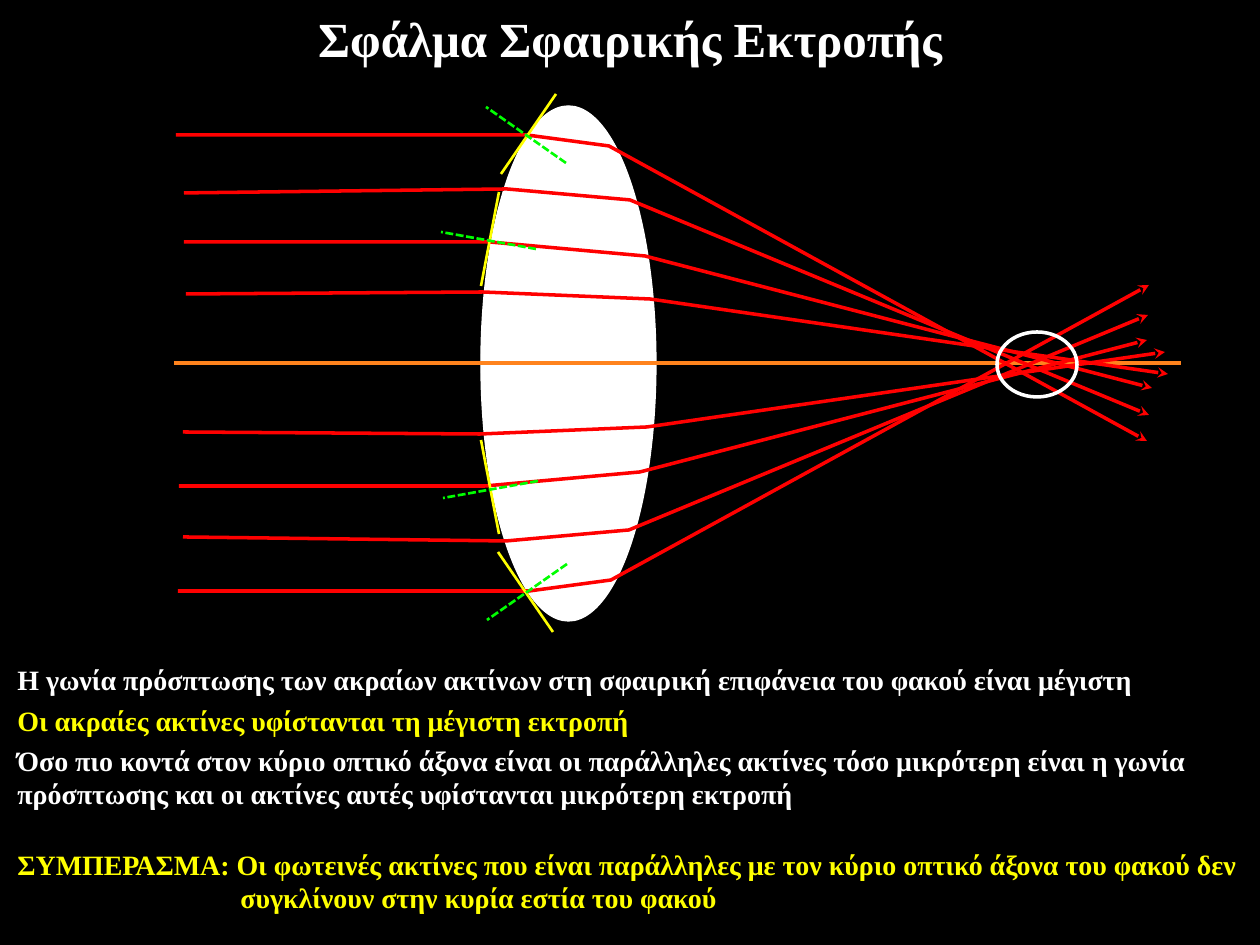
"""Build a slide on the spherical aberration of a lens."""
import pptx
import pptx.dml.color
import pptx.enum.dml
import pptx.enum.shapes
import pptx.enum.text
import pptx.oxml.ns
import pptx.util
from lxml import etree

RGB = pptx.dml.color.RGBColor
BLACK = RGB(0, 0, 0)
WHITE = RGB(255, 255, 255)
RED = RGB(255, 0, 0)
ORANGE = RGB(255, 131, 29)
YELLOW = RGB(255, 255, 0)
GREEN = RGB(0, 255, 0)
FONT = "Times New Roman"
SCALE = 914400 / 126
OVAL = pptx.enum.shapes.MSO_SHAPE.OVAL
DASH = pptx.enum.dml.MSO_LINE.SQUARE_DOT

# Each entry: points above the axis, then x shift and y sum of the mirrored twin.
RAYS = [
    ([(176, 135), (527, 135), (609, 146), (1147, 441)], 2, 726),
    ([(184, 193), (507, 189), (630, 200), (1149, 415)], -1, 730),
    ([(186, 294), (483, 292), (650, 299), (1168, 374)], -3, 726),
    ([(184, 242), (490, 242), (645, 256), (1152, 388)], -5, 728),
]
TANGENTS = [
    ([(556, 94), (501, 174)], -3, 726),
    ([(499, 192), (481, 286)], 0, 726),
]
NORMALS = [
    ([(566, 163), (486, 107)], 1, 727),
    ([(536, 249), (441, 232)], 2, 730),
]
NOTES = [
    (656, 43, WHITE, "Η γωνία πρόσπτωσης των ακραίων ακτίνων στη σφαιρική "
     "επιφάνεια του φακού είναι μέγιστη"),
    (697, 43, YELLOW, "Οι ακραίες ακτίνες υφίστανται τη μέγιστη εκτροπή"),
    (737, 77, WHITE, "Όσο πιο κοντά στον κύριο οπτικό άξονα είναι οι παράλληλες "
     "ακτίνες τόσο μικρότερη είναι η γωνία πρόσπτωσης και οι ακτίνες αυτές "
     "υφίστανται μικρότερη εκτροπή"),
    (841, 78, YELLOW, "ΣΥΜΠΕΡΑΣΜΑ: Οι φωτεινές ακτίνες που είναι παράλληλες με "
     "τον κύριο οπτικό άξονα του φακού δεν\nσυγκλίνουν στην κυρία εστία του φακού"),
]


def px(n):
    return pptx.util.Emu(round(n * SCALE))


def with_mirror(points, dx, y_sum):
    return points, [(x + dx, y_sum - y) for x, y in points]


def set_line(sp, color, width):
    sp.line.color.rgb = color
    sp.line.width = pptx.util.Pt(width)


def add_oval(slide, box, color, width, fill=None):
    sp = slide.shapes.add_shape(OVAL, *map(px, box))
    sp.shadow.inherit = False
    if fill is None:
        sp.fill.background()
    else:
        sp.fill.solid()
        sp.fill.fore_color.rgb = fill
    set_line(sp, color, width)


def add_line(slide, points, color, width, dash=None):
    ends = [px(n) for point in points for n in point]
    sp = slide.shapes.add_connector(pptx.enum.shapes.MSO_CONNECTOR.STRAIGHT, *ends)
    set_line(sp, color, width)
    if dash:
        sp.line.dash_style = dash
    etree.SubElement(sp._element.spPr, pptx.oxml.ns.qn("a:effectLst"))


def add_ray(slide, points):
    builder = slide.shapes.build_freeform(*points[0], scale=SCALE)
    builder.add_line_segments(points[1:], close=False)
    sp = builder.convert_to_shape()
    sp.shadow.inherit = False
    sp.fill.background()
    set_line(sp, RED, 2)
    ln = sp.line._get_or_add_ln()
    etree.SubElement(ln, pptx.oxml.ns.qn("a:tailEnd"), type="stealth")


def write_text(sp, text, size, color, align):
    tf = sp.text_frame
    tf.text = text
    tf.word_wrap = True
    tf.auto_size = pptx.enum.text.MSO_AUTO_SIZE.NONE
    tf.vertical_anchor = pptx.enum.text.MSO_ANCHOR.TOP
    for p in tf.paragraphs:
        p.alignment = align
        for r in p.runs:
            r.font.name = FONT
            r.font.size = pptx.util.Pt(size)
            r.font.bold = True
            r.font.color.rgb = color
    return tf


def add_title(slide, text):
    sp = slide.shapes.title
    sp.left, sp.top, sp.width, sp.height = map(px, (0, 2, 1260, 67))
    write_text(sp, text, 28, WHITE, pptx.enum.text.PP_ALIGN.CENTER)


def add_note(slide, top, height, color, text):
    sp = slide.shapes.add_textbox(px(5), px(top), px(1255), px(height))
    tf = write_text(sp, text, 16, color, pptx.enum.text.PP_ALIGN.LEFT)
    for p in tf.paragraphs[1:]:
        p._p.get_or_add_pPr().set("marL", str(px(223)))


def main():
    prs = pptx.Presentation()
    prs.slide_width, prs.slide_height = px(1260), px(945)
    slide = prs.slides.add_slide(prs.slide_layouts[5])
    slide.background.fill.solid()
    slide.background.fill.fore_color.rgb = BLACK

    add_title(slide, "Σφάλμα Σφαιρικής Εκτροπής")
    add_oval(slide, (481, 106, 175, 515), WHITE, 0.75, WHITE)
    add_line(slide, [(174, 363), (1181, 363)], ORANGE, 2.25)
    for ray in RAYS:
        for points in with_mirror(*ray):
            add_ray(slide, points)
    for lines, color, dash in ((TANGENTS, YELLOW, None), (NORMALS, GREEN, DASH)):
        for line in lines:
            for points in with_mirror(*line):
                add_line(slide, points, color, 1.5, dash)
    for note in NOTES:
        add_note(slide, *note)
    add_oval(slide, (997, 332, 80, 65), WHITE, 2)
    prs.save("out.pptx")


if __name__ == "__main__":
    main()
